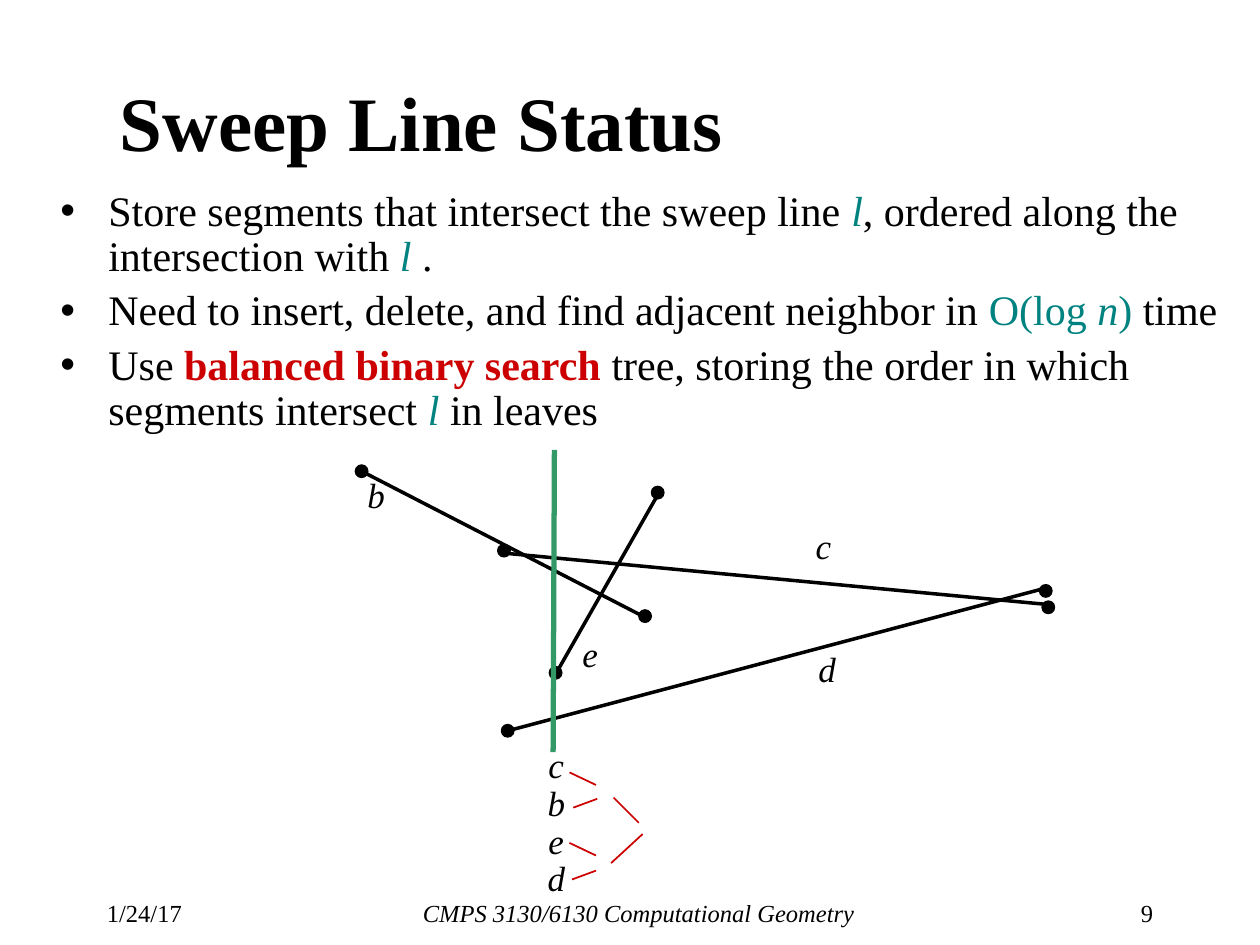
from pptx import Presentation
from pptx.dml.color import RGBColor
from pptx.enum.shapes import MSO_CONNECTOR, MSO_SHAPE
from pptx.enum.text import MSO_ANCHOR, MSO_AUTO_SIZE, PP_ALIGN
from pptx.oxml.ns import qn
from pptx.util import Inches, Pt
from lxml.etree import SubElement

BLACK = RGBColor(0, 0, 0)
TEAL = RGBColor(0, 0x83, 0x80)
RED = RGBColor(0xCC, 0, 0)
GREEN = RGBColor(0x33, 0x99, 0x66)
FACE = "Times New Roman"

TITLE = "Sweep Line Status"
MATH = {"color": TEAL, "italic": True}
POINTS = [
    [("Store segments that intersect the sweep line ", {}), ("l", MATH),
     (", ordered along the intersection with ", {}), ("l", MATH), (" .", {})],
    [("Need to insert, delete, and find adjacent neighbor in ", {}),
     ("O(log ", {"color": TEAL}), ("n", MATH), (")", {"color": TEAL}),
     (" time", {})],
    [("Use ", {}), ("balanced binary search", {"color": RED, "bold": True}),
     (" tree, storing the order in which segments intersect ", {}),
     ("l ", MATH), ("in leaves", {})],
]
FOOT = [
    ("1/24/17", 0.75, 0.95, PP_ALIGN.LEFT, False),
    ("CMPS 3130/6130 Computational Geometry", 1.9, 6.34, PP_ALIGN.CENTER, True),
    ("9", 8.43, 0.82, PP_ALIGN.RIGHT, False),
]
DOTS = [(4.41, 5.34), (5.22, 3.91), (4.03, 5.8), (8.3, 4.69),
        (8.32, 4.82), (4, 4.37), (2.87, 3.74), (5.12, 4.89)]
SEGS = {
    "b": ((2.87, 3.74, 5.14, 4.91), (2.77, 3.71)),
    "e": ((4.41, 5.35, 5.23, 3.91), (4.47, 4.97)),
    "c": ((4, 4.39, 8.34, 4.8), (6.32, 4.11)),
    "d": ((4.03, 5.8, 8.29, 4.67), (6.35, 5.09)),
}
SWEEP = (4.4, 3.57, 4.39, 5.97)
ORDER = "cbed"
TREE = [(4.52, 6.13, 4.73, 6.23), (4.55, 6.41, 4.74, 6.34),
        (4.52, 6.69, 4.73, 6.79), (4.54, 6.98, 4.73, 6.91),
        (4.87, 6.33, 5.07, 6.53), (4.85, 6.85, 5.1, 6.62)]
DOT, CELL = 0.1, 0.43

deck = Presentation()
deck.slide_width, deck.slide_height = Inches(10), Inches(7.5)
slide = deck.slides.add_slide(deck.slide_layouts[1])
shapes = slide.shapes


def style(run, size, color=BLACK, **form):
    run.font.color.rgb = color
    for key, val in {"name": FACE, "size": Pt(size), **form}.items():
        setattr(run.font, key, val)


def place(shape, *box):
    for key, val in zip(("left", "top", "width", "height"), box):
        setattr(shape, key, Inches(val))
    frame = shape.text_frame
    frame.word_wrap, frame.auto_size = True, MSO_AUTO_SIZE.NONE
    return frame


def label(text, box, size, align=PP_ALIGN.CENTER, italic=True):
    area = shapes.add_textbox(*map(Inches, box))
    para = place(area, *box).paragraphs[0]
    para.text, para.alignment = text, align
    for run in para.runs:
        style(run, size, italic=italic)
    return para


def line(ends, color, width):
    link = shapes.add_connector(MSO_CONNECTOR.STRAIGHT, *map(Inches, ends))
    link.line.color.rgb, link.line.width = color, Pt(width)
    SubElement(link._element.spPr, qn("a:effectLst"))


for text, left, width, align, slant in FOOT:
    label(text, (left, 7.08, width, 0.25), 14, align, slant)

head = place(shapes.title, 0.85, 0.33, 8.25, 1.25)
head.text, head.vertical_anchor = TITLE, MSO_ANCHOR.MIDDLE
head.paragraphs[0].alignment = PP_ALIGN.LEFT
style(head.paragraphs[0].runs[0], 44, bold=True)

body = place(slide.placeholders[1], 0.38, 1.46, 9.43, 2.73)
for num, parts in enumerate(POINTS):
    para = body.add_paragraph() if num else body.paragraphs[0]
    para.line_spacing, para.space_before = 0.9, Pt(5)
    props = para._p.get_or_add_pPr()
    props.set("marL", str(Inches(0.38)))
    props.set("indent", str(-Inches(0.38)))
    SubElement(props, qn("a:buChar")).set("char", "•")
    for text, form in parts:
        run = para.add_run()
        run.text = text
        style(run, 24, **form)

for x, y in DOTS:
    dot = shapes.add_shape(MSO_SHAPE.OVAL, Inches(x - DOT / 2),
                           Inches(y - DOT / 2), Inches(DOT), Inches(DOT))
    dot.shadow.inherit = False
    dot.fill.solid()
    dot.fill.fore_color.rgb = dot.line.color.rgb = BLACK
    dot.line.width = Pt(0.75)

for name, (ends, spot) in SEGS.items():
    line(ends, BLACK, 2)
    label(name, (*spot, CELL, CELL), 20)

line(SWEEP, GREEN, 3)
label("\v".join(ORDER), (4.2, 5.89, CELL, 1.3), 20).line_spacing = 0.9
for ends in TREE:
    line(ends, RED, 1)

deck.save("out.pptx")
